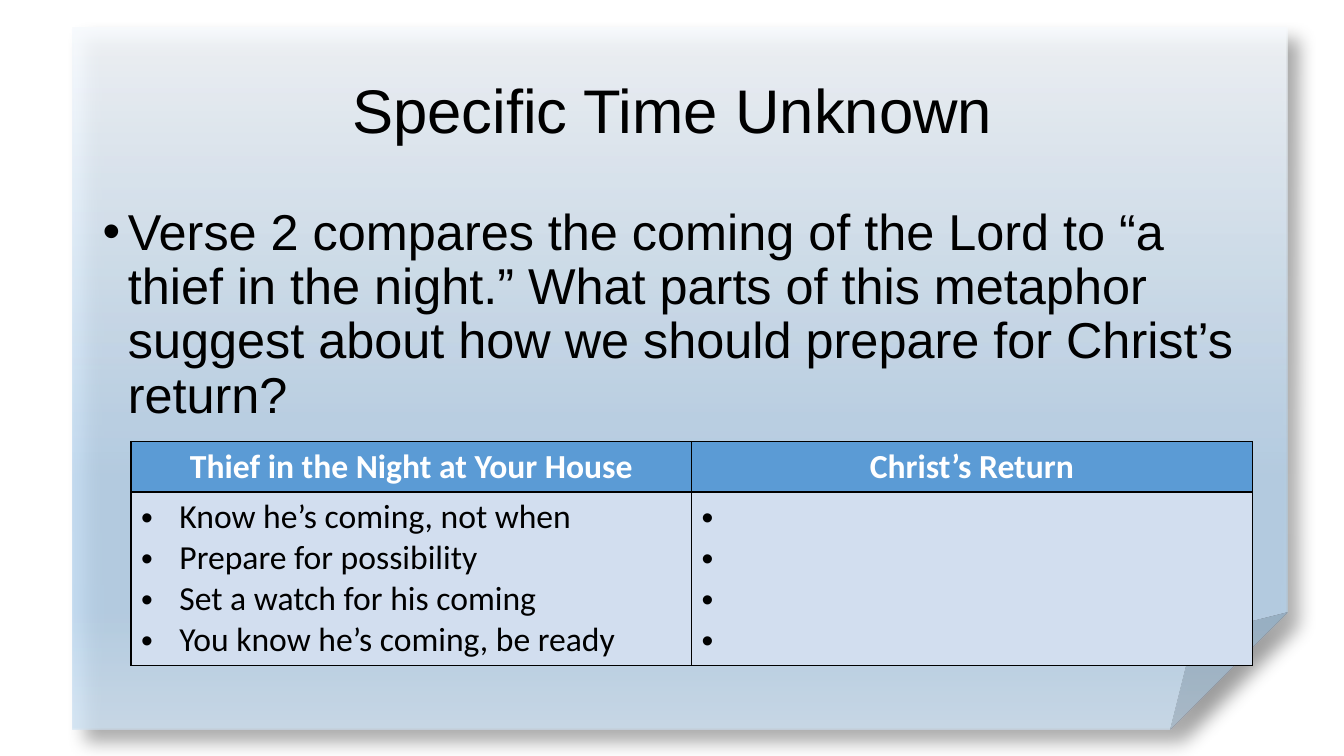
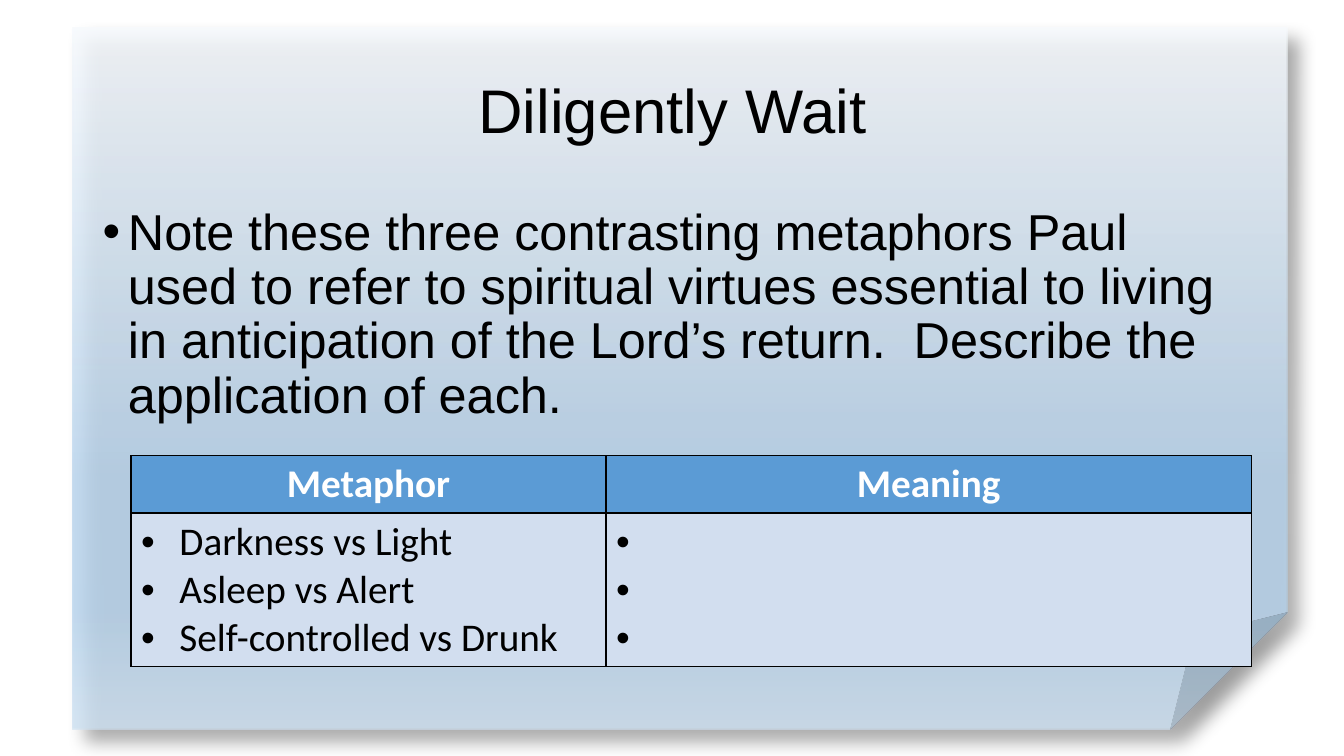
from pptx import Presentation
from pptx.dml.color import RGBColor
from pptx.enum.shapes import MSO_SHAPE as Shape
from pptx.enum.text import MSO_ANCHOR as Anchor, PP_ALIGN as Align
from pptx.oxml import parse_xml
from pptx.oxml.ns import nsdecls
from pptx.util import Inches, Pt

NS = nsdecls("a")


def color(value):
    return RGBColor.from_string(value)


def apply(target, values):
    for name, value in values.items():
        setattr(target, name, value)


def set_bullet(para, indent):
    """Give the paragraph a round bullet with a hanging indent."""
    properties = para._p.get_or_add_pPr()
    properties.set("marL", str(Inches(indent)))
    properties.set("indent", str(-Inches(indent)))
    properties.append(parse_xml(f'<a:buFont {NS} typeface="Arial"/>'))
    properties.append(parse_xml(f'<a:buChar {NS} char="•"/>'))


class Deck:
    BLACK, WHITE = "000000", "FFFFFF"
    HEADER, CELL = "5B9BD5", "D2DEEF"
    # position %, colour, opacity %
    PAPER = [(0, "F7FAFD", 87), (64, "B5D2EC", 79),
             (83, "B5D2EC", 80), (100, "CEE1F2", 81)]
    TITLE = {"name": "Arial", "size": Pt(44)}
    BODY = {"name": "Arial", "size": Pt(36)}
    TABLE_LEFT = 1.3

    def __init__(self):
        self.deck = Presentation()
        self.deck.slide_width = Inches(13.33)
        self.deck.slide_height = Inches(7.5)
        self.page = None

    def add_page(self, title, body):
        self.page = self.deck.slides.add_slide(self.deck.slide_layouts[6])
        self.add_paper()
        para = self.add_text(title, 0.4, 1.45, self.TITLE, Anchor.MIDDLE)
        para.alignment = Align.CENTER
        set_bullet(self.add_text(body, 2, 4.76, self.BODY, Anchor.TOP), 0.25)

    def add_paper(self):
        """Draw the translucent sheet with a folded corner and soft shadow."""
        paper = self.page.shapes.add_shape(
            Shape.FOLDED_CORNER, Inches(0.72), Inches(0.27),
            Inches(12.05), Inches(6.97))
        paper.line.fill.background()
        paper.fill.background()
        paper.shadow.inherit = False
        stops = "".join(
            f'<a:gs pos="{place * 1000}"><a:srgbClr val="{shade}">'
            f'<a:alpha val="{opacity * 1000}"/></a:srgbClr></a:gs>'
            for place, shade, opacity in self.PAPER)
        properties = paper._element.spPr
        properties.replace(properties.find("{*}noFill"), parse_xml(
            f'<a:gradFill {NS} rotWithShape="1"><a:gsLst>{stops}</a:gsLst>'
            '<a:lin ang="5400000" scaled="0"/></a:gradFill>'))
        properties.find("{*}effectLst").append(parse_xml(
            f'<a:outerShdw {NS} blurRad="{Pt(13)}" dist="{Pt(13)}" '
            'dir="2700000" algn="tl" rotWithShape="0">'
            f'<a:srgbClr val="{self.BLACK}"><a:alpha val="40000"/>'
            '</a:srgbClr></a:outerShdw>'))

    def add_span(self, para, text, style, shade):
        span = para.add_run()
        span.text = text
        apply(span.font, style)
        span.font.color.rgb = color(shade)

    def add_text(self, text, top, height, style, anchor):
        box = self.page.shapes.add_textbox(
            Inches(0.92), Inches(top), Inches(11.5), Inches(height))
        apply(box.text_frame, {"word_wrap": True, "vertical_anchor": anchor})
        para = box.text_frame.paragraphs[0]
        para.line_spacing = 0.9
        self.add_span(para, text, style, self.BLACK)
        return para

    def style_cell(self, cell, shade):
        properties = cell._tc.get_or_add_tcPr()
        for side in "LRTB":
            properties.append(parse_xml(
                f'<a:ln{side} {NS} w="{Pt(1)}"><a:solidFill>'
                f'<a:srgbClr val="{self.BLACK}"/></a:solidFill></a:ln{side}>'))
        cell.fill.solid()
        cell.fill.fore_color.rgb = color(shade)

    def add_table(self, top, widths, heights, size, headings, items):
        """Draw headings over a bulleted list and a column of open bullets."""
        table = self.page.shapes.add_table(
            2, 2, Inches(self.TABLE_LEFT), Inches(top),
            Inches(sum(widths)), Inches(sum(heights))).table
        for column, width in zip(table.columns, widths):
            column.width = Inches(width)
        for row, height in zip(table.rows, heights):
            row.height = Inches(height)
        style = {"name": "Calibri", "size": Pt(size)}
        answers = [" "] * len(items)
        for index, (heading, lines) in enumerate(zip(headings, (items, answers))):
            header, cell = table.cell(0, index), table.cell(1, index)
            self.style_cell(header, self.HEADER)
            self.style_cell(cell, self.CELL)
            para = header.text_frame.paragraphs[0]
            para.alignment = Align.CENTER
            self.add_span(para, heading, {**style, "bold": True}, self.WHITE)
            frame = cell.text_frame
            for number, line in enumerate(lines):
                para = frame.add_paragraph() if number else frame.paragraphs[0]
                set_bullet(para, 0.38)
                self.add_span(para, line, {**style, "bold": False}, self.BLACK)


def main():
    lesson = Deck()
    lesson.add_page(
        "Specific Time Unknown",
        "Verse 2 compares the coming of the Lord to “a thief in the night.” "
        "What parts of this metaphor suggest about how we should prepare for "
        "Christ’s return?")
    lesson.add_table(
        4.38, (5.56, 5.56), (0.5, 1.72), 24,
        ("Thief in the Night at Your House", "Christ’s Return"),
        ["Know he’s coming, not when", "Prepare for possibility",
         "Set a watch for his coming", "You know he’s coming, be ready"])
    lesson.add_page(
        "Diligently Wait",
        "Note these three contrasting metaphors Paul used to refer to "
        "spiritual virtues essential to living in anticipation of the Lord’s "
        "return.  Describe the application of each.")
    lesson.add_table(
        4.52, (4.71, 6.4), (0.57, 1.52), 28, ("Metaphor", "Meaning"),
        ["Darkness vs Light", "Asleep vs Alert", "Self-controlled vs Drunk"])
    lesson.deck.save("out.pptx")


if __name__ == "__main__":
    main()
